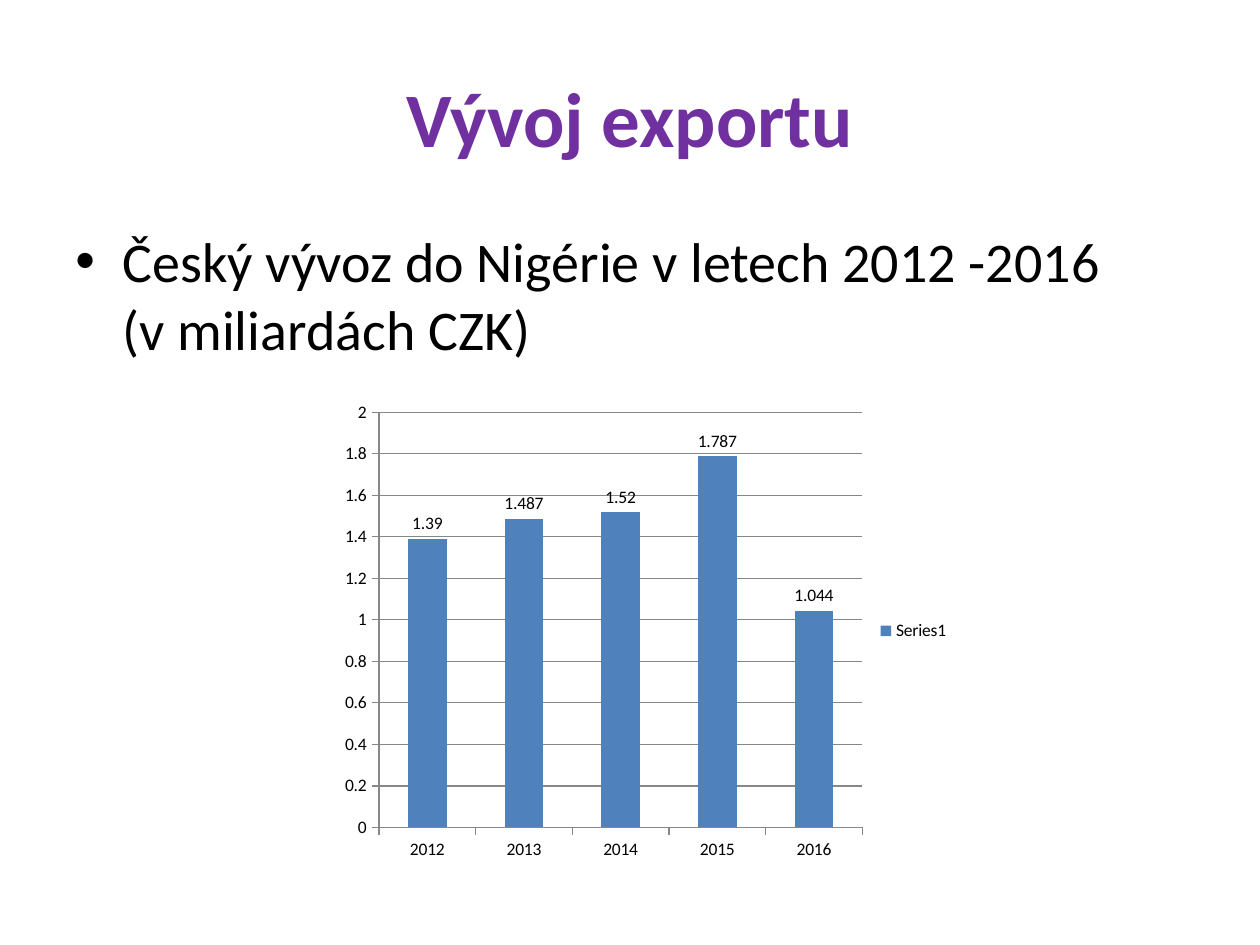
from lxml import etree
from pptx import Presentation
from pptx.chart.data import CategoryChartData
from pptx.dml.color import RGBColor
from pptx.enum.chart import XL_CHART_TYPE, XL_LABEL_POSITION, XL_LEGEND_POSITION, XL_TICK_MARK
from pptx.enum.text import MSO_ANCHOR, PP_ALIGN
from pptx.oxml.ns import qn
from pptx.util import Cm, Pt

COLUMN = XL_CHART_TYPE.COLUMN_CLUSTERED
LABEL_ABOVE = XL_LABEL_POSITION.OUTSIDE_END
LEGEND_RIGHT = XL_LEGEND_POSITION.RIGHT
TICK_OUTSIDE = XL_TICK_MARK.OUTSIDE
MIDDLE = MSO_ANCHOR.MIDDLE
CENTER = PP_ALIGN.CENTER

FONT = "Calibri"
COLORS = {"title": "7030A0", "text": "000000", "bar": "4F81BD", "axis": "878787"}
EXPORTS = {"2012": 1.39, "2013": 1.487, "2014": 1.52, "2015": 1.787, "2016": 1.044}


def color(name):
    """Return the named colour of the palette."""
    return RGBColor.from_string(COLORS[name])


def format_font(font, size, color_name, bold=False):
    """Set the typeface, size, colour and weight of a font."""
    font.name = FONT
    font.size = Pt(size)
    font.bold = bold
    font.color.rgb = color(color_name)


def place_title(slide, left, top, width, height, text):
    """Move and format the title placeholder."""
    title = slide.shapes.title
    title.left, title.top, title.width, title.height = left, top, width, height
    title.text_frame.text = text
    title.text_frame.vertical_anchor = MIDDLE
    paragraph = title.text_frame.paragraphs[0]
    paragraph.alignment = CENTER
    format_font(paragraph.runs[0].font, 44, "title", bold=True)


def add_bullet_text(slide, left, top, width, height, text):
    """Add a bulleted paragraph with a hanging indent."""
    text_frame = slide.shapes.add_textbox(left, top, width, height).text_frame
    text_frame.word_wrap = True
    paragraph = text_frame.paragraphs[0]
    paragraph.text = text
    paragraph.space_before = Pt(6.4)
    for run in paragraph.runs:
        format_font(run.font, 32, "text")
    properties = paragraph._p.get_or_add_pPr()
    indent = Cm(0.95)
    properties.set("marL", str(indent))
    properties.set("indent", str(-indent))
    etree.SubElement(properties, qn("a:buFont")).set("typeface", "Arial")
    etree.SubElement(properties, qn("a:buChar")).set("char", "•")


def add_export_chart(slide, left, top, width, height, exports):
    """Add the column chart of yearly exports."""
    data = CategoryChartData()
    data.categories = list(exports)
    data.add_series("Series1", exports.values())
    chart = slide.shapes.add_chart(COLUMN, left, top, width, height, data).chart
    format_font(chart.font, 10, "text")
    chart.has_title = False
    chart.has_legend = True
    chart.legend.position = LEGEND_RIGHT
    chart.legend.include_in_layout = False

    value_axis = chart.value_axis
    value_axis.minimum_scale, value_axis.maximum_scale = 0, 2
    value_axis.major_unit = 0.2
    value_axis.has_major_gridlines = True
    for axis in (chart.category_axis, value_axis):
        axis.major_tick_mark = TICK_OUTSIDE
    for part in (chart.category_axis, value_axis, value_axis.major_gridlines):
        part.format.line.color.rgb = color("axis")
        part.format.line.width = Pt(0.75)

    plot = chart.plots[0]
    plot.vary_by_categories = False
    plot.gap_width = 150
    plot.has_data_labels = True
    plot.data_labels.show_value = True
    plot.data_labels.position = LABEL_ABOVE
    fill = plot.series[0].format.fill
    fill.solid()
    fill.fore_color.rgb = color("bar")


def main():
    """Build the export slide and save it."""
    presentation = Presentation()
    presentation.slide_width, presentation.slide_height = Cm(25.4), Cm(19.05)
    slide = presentation.slides.add_slide(presentation.slide_layouts[5])
    margin = Cm(1.27)
    content_width = presentation.slide_width - 2 * margin
    place_title(slide, margin, Cm(0.76), content_width, Cm(3.18), "Vývoj exportu")
    add_bullet_text(slide, margin, Cm(4.45), content_width, Cm(12.57),
                    "Český vývoz do Nigérie v letech 2012 -2016\v(v miliardách CZK)")
    add_export_chart(slide, Cm(6.7), Cm(7.92), Cm(12.7), Cm(9.6), EXPORTS)
    presentation.save("out.pptx")


if __name__ == "__main__":
    main()
